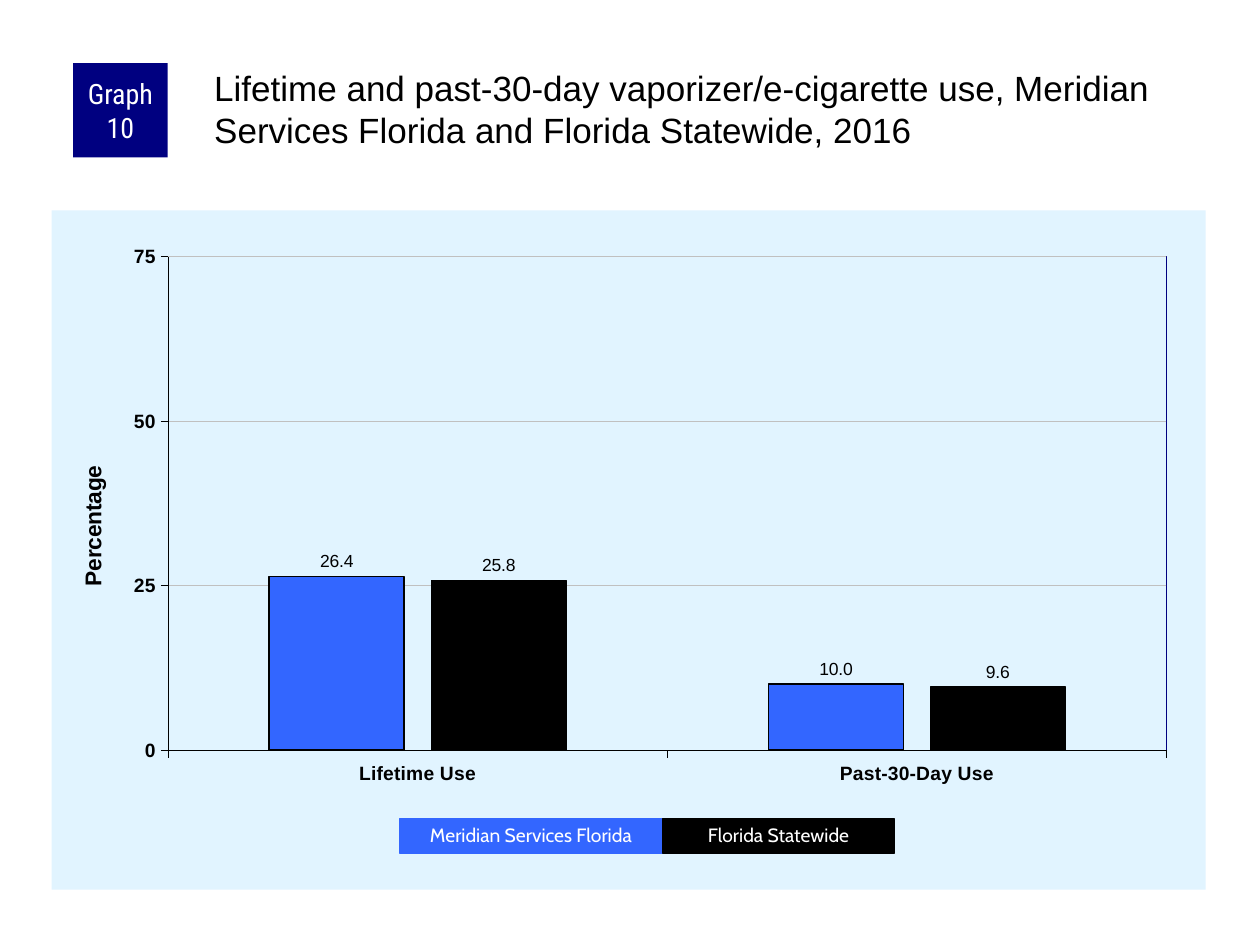
from dataclasses import dataclass

from lxml.etree import SubElement
from pptx import Presentation
from pptx.chart.data import CategoryChartData
from pptx.dml.color import RGBColor
from pptx.enum.chart import XL_CHART_TYPE, XL_LABEL_POSITION, XL_TICK_MARK
from pptx.enum.shapes import MSO_SHAPE
from pptx.enum.text import MSO_ANCHOR, PP_ALIGN
from pptx.oxml import parse_xml
from pptx.oxml.ns import nsdecls, qn
from pptx.util import Inches, Pt


@dataclass(frozen=True)
class Theme:
    navy: str = "000080"
    blue: str = "3366FF"
    black: str = "000000"
    white: str = "FFFFFF"
    panel: str = "E1F4FF"
    grid: str = "C0C0C0"
    body: str = "Arial"
    badge: str = "Roboto Condensed"
    legend: str = "Cabin"
    title_size: float = 20
    badge_size: float = 16
    axis_title_size: float = 13
    axis_size: float = 11
    legend_size: float = 11
    label_size: float = 10
    hairline: float = 0.25


THEME = Theme()
REGION = "Meridian Services Florida"
STATE = "Florida Statewide"
# name, values, fill, outline width
SERIES = [
    (REGION, (26.4, 10.0), THEME.blue, 1),
    (STATE, (25.8, 9.6), THEME.black, 0.75),
]


def style_font(font, name, size, color, bold=False):
    font.name, font.size, font.bold = name, Pt(size), bold
    font.color.rgb = RGBColor.from_string(color)


def style_line(line, color, width):
    line.color.rgb = RGBColor.from_string(color)
    line.width = Pt(width)


def style_fill(fill, color):
    fill.solid()
    fill.fore_color.rgb = RGBColor.from_string(color)


def set_layout(parent, **values):
    """Give a chart part a manual position, in fractions of the chart."""
    for old in parent.findall(qn("c:layout")):
        parent.remove(old)
    layout = parse_xml(f"<c:layout {nsdecls('c')}><c:manualLayout/></c:layout>")
    for tag, value in values.items():
        SubElement(layout[0], qn(f"c:{tag}")).set("val", str(value))
    tx = parent.find(qn("c:tx"))
    if tx is None:
        parent.insert(0, layout)
    else:
        tx.addnext(layout)


def area_format(fill, line):
    return parse_xml(f"<c:spPr {nsdecls('c', 'a')}>{fill}<a:ln w=\"3175\">{line}</a:ln></c:spPr>")


def solid(color):
    return f'<a:solidFill><a:srgbClr val="{color}"/></a:solidFill>'


def style_axis(axis):
    axis.major_tick_mark = XL_TICK_MARK.OUTSIDE
    axis.minor_tick_mark = XL_TICK_MARK.NONE
    style_line(axis.format.line, THEME.black, THEME.hairline)
    style_font(axis.tick_labels.font, THEME.body, THEME.axis_size, THEME.black, True)


def add_usage_chart(s):
    data = CategoryChartData(number_format="0.0")
    data.categories = ["Lifetime Use", "Past-30-Day Use"]
    for name, values, _, _ in SERIES:
        data.add_series(name, values)
    chart = s.shapes.add_chart(XL_CHART_TYPE.COLUMN_CLUSTERED, Inches(0.41), Inches(1.67),
                               Inches(9.16), Inches(5.39), data).chart
    chart.has_title = chart.has_legend = False
    style_font(chart.font, THEME.body, 11.5, THEME.black)

    # Columns and value labels
    plot = chart.plots[0]
    plot.gap_width, plot.overlap = 150, -20
    plot.vary_by_categories = False
    for series, (_, _, color, width) in zip(plot.series, SERIES):
        style_fill(series.format.fill, color)
        style_line(series.format.line, THEME.black, width)
        labels = series.data_labels
        labels.show_value = True
        labels.position = XL_LABEL_POSITION.OUTSIDE_END
        labels.number_format, labels.number_format_is_linked = "0.0", False
        style_font(labels.font, THEME.body, THEME.label_size, THEME.black)

    # Axes
    style_axis(chart.category_axis)
    axis = chart.value_axis
    style_axis(axis)
    axis.minimum_scale, axis.maximum_scale, axis.major_unit = 0, 75, 25
    axis.tick_labels.number_format, axis.tick_labels.number_format_is_linked = "0", False
    style_line(axis.major_gridlines.format.line, THEME.grid, THEME.hairline)
    tf = axis.axis_title.text_frame
    tf.text = "Percentage"
    style_font(tf.paragraphs[0].font, THEME.body, THEME.axis_title_size, THEME.black, True)
    body = tf._txBody.find(qn("a:bodyPr"))
    body.set("rot", "-5400000")
    body.set("vert", "horz")
    set_layout(axis.axis_title._element, xMode="edge", yMode="edge", x=0.02, y=0.37)

    # Panel fill, plot frame and plot position
    space = chart._chartSpace
    space.find(qn("c:txPr")).addprevious(area_format(solid(THEME.panel), "<a:noFill/>"))
    area = space.chart.plotArea
    area.append(area_format("<a:noFill/>", solid(THEME.navy)))
    set_layout(area, layoutTarget="inner", xMode="edge", yMode="edge",
               x=0.101, y=0.068, w=0.865, h=0.727)


def add_box(s, text, left, top, width, height, fill, font, size, outlined=False):
    sp = s.shapes.add_shape(MSO_SHAPE.RECTANGLE, Inches(left), Inches(top),
                            Inches(width), Inches(height))
    sp.shadow.inherit = False
    style_fill(sp.fill, fill)
    if outlined:
        style_line(sp.line, fill, 0.75)
    else:
        sp.line.fill.background()
    tf = sp.text_frame
    tf.word_wrap = True
    tf.vertical_anchor = MSO_ANCHOR.MIDDLE
    tf.margin_left = tf.margin_right = Inches(0.05)
    tf.margin_top = tf.margin_bottom = 0
    p = tf.paragraphs[0]
    p.text, p.alignment = text, PP_ALIGN.CENTER
    style_font(p.font, font, size, THEME.white)
    return p


def add_title(s, text):
    tf = s.shapes.add_textbox(Inches(1.67), Inches(0.5), Inches(7.92), Inches(0.83)).text_frame
    tf.word_wrap = True
    tf.margin_left = tf.margin_top = Inches(0.03)
    tf.margin_right = tf.margin_bottom = 0
    p = tf.paragraphs[0]
    p.text = text
    style_font(p.font, THEME.body, THEME.title_size, THEME.black)


def add_legend(s):
    left = 3.17
    for (name, _, color, _), width in zip(SERIES, (2.09, 1.84)):
        p = add_box(s, name, left, 6.5, width, 0.27, color,
                    THEME.legend, THEME.legend_size, outlined=True)
        p.line_spacing = 0.9
        left += width


def main():
    prs = Presentation()
    prs.slide_width, prs.slide_height = Inches(10), Inches(7.5)
    s = prs.slides.add_slide(prs.slide_layouts[6])
    add_usage_chart(s)
    add_box(s, "Graph 10", 0.58, 0.5, 0.75, 0.75, THEME.navy, THEME.badge, THEME.badge_size)
    add_title(s, f"Lifetime and past-30-day vaporizer/e-cigarette use, {REGION} and {STATE}, 2016")
    add_legend(s)
    prs.save("out.pptx")


if __name__ == "__main__":
    main()
